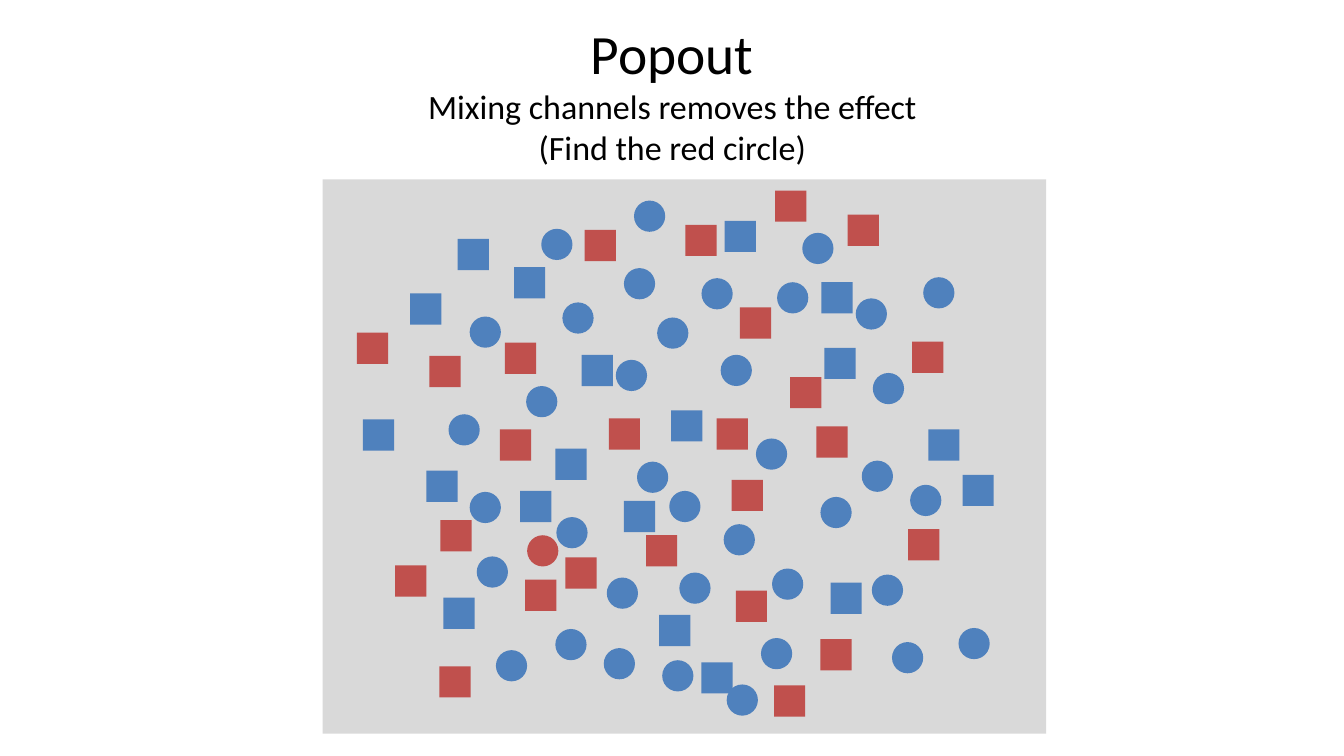
"""Build the popout slide: a red circle hidden among mixed circles and squares."""
import dataclasses
import typing

import pptx
import pptx.dml.color
import pptx.enum.shapes
import pptx.enum.text
import pptx.util

Spot = typing.Tuple[float, float]
Spots = typing.Sequence[Spot]
ShapeKind = pptx.enum.shapes.MSO_SHAPE


@dataclasses.dataclass(frozen=True)
class Theme:
    """Colours, font and type sizes of the slide."""
    blue: str = "4F81BD"
    red: str = "C0504D"
    panel: str = "D9D9D9"
    text: str = "000000"
    font: str = "Calibri"
    title_size: float = 39.6
    subtitle_size: float = 24.3


@dataclasses.dataclass(frozen=True)
class Box:
    """A rectangle on the slide, in inches."""
    left: float
    top: float
    width: float
    height: float

    def lengths(self) -> typing.Dict[str, pptx.util.Cm]:
        """Return left, top, width and height as slide lengths."""
        return {name: pptx.util.Cm(value * 2.54) for name, value in dataclasses.asdict(self).items()}


@dataclasses.dataclass(frozen=True)
class MarkStyle:
    """Shape and colour of one sort of mark."""
    kind: ShapeKind
    colour: str


@dataclasses.dataclass(frozen=True)
class Band:
    """Marks in one strip of the panel, each a slide left and a drop below the strip's top."""
    blue_circles: Spots = ()
    blue_squares: Spots = ()
    red_squares: Spots = ()
    target: Spots = ()


@dataclasses.dataclass(frozen=True)
class TitleLine:
    """One line of the title with its type size."""
    text: str
    size: float


THEME = Theme()
TITLE = Box(0.67, 0.3, 12, 1.25)
PANEL = Box(3.2, 1.78, 7.18, 5.5)
MARK_SIZE = 0.31

TITLE_LINES = [
    TitleLine("Popout", THEME.title_size),
    TitleLine("Mixing channels removes the effect", THEME.subtitle_size),
    TitleLine("(Find the red circle)", THEME.subtitle_size),
]

MARK_STYLES = {
    "blue_circles": MarkStyle(ShapeKind.OVAL, THEME.blue),
    "blue_squares": MarkStyle(ShapeKind.RECTANGLE, THEME.blue),
    "red_squares": MarkStyle(ShapeKind.RECTANGLE, THEME.red),
    "target": MarkStyle(ShapeKind.OVAL, THEME.red),
}

BANDS = [
    Band(blue_circles=[(5.37, 0.49), (6.29, 0.21)],
         blue_squares=[(7.19, 0.41)],
         red_squares=[(6.8, 0.45), (7.69, 0.11), (8.41, 0.35)]),
    Band(blue_circles=[(6.19, 0.38), (6.96, 0.48), (7.96, 0.03), (9.16, 0.47)],
         blue_squares=[(4.54, 0.09), (5.1, 0.37)],
         red_squares=[(5.8, 0)]),
    Band(blue_circles=[(4.66, 0.36), (5.58, 0.22), (6.52, 0.37), (7.71, 0.02), (8.49, 0.18)],
         blue_squares=[(4.07, 0.13), (8.15, 0.02)],
         red_squares=[(7.34, 0.27)]),
    Band(blue_circles=[(6.11, 0.29), (7.15, 0.24), (8.66, 0.42)],
         blue_squares=[(5.77, 0.24), (8.18, 0.17)],
         red_squares=[(3.54, 0.02), (4.26, 0.25), (5.01, 0.12), (7.84, 0.46), (9.05, 0.11)]),
    Band(blue_circles=[(4.45, 0.33), (5.22, 0.05)],
         blue_squares=[(3.6, 0.38), (6.66, 0.29), (9.21, 0.48)],
         red_squares=[(4.96, 0.48), (6.04, 0.37), (7.11, 0.37), (8.1, 0.45)]),
    Band(blue_circles=[(6.32, 0.3), (7.5, 0.07), (8.55, 0.29)],
         blue_squares=[(4.23, 0.39), (5.51, 0.17), (9.55, 0.43)],
         red_squares=[(7.26, 0.48)]),
    Band(blue_circles=[(4.66, 0.1), (5.52, 0.35), (6.64, 0.09), (7.18, 0.42), (8.14, 0.15), (9.03, 0.03)],
         blue_squares=[(5.16, 0.09), (6.19, 0.19)],
         red_squares=[(4.37, 0.38), (9.01, 0.47)]),
    Band(blue_circles=[(4.73, 0.24), (6.02, 0.45), (6.74, 0.4), (7.66, 0.36), (8.65, 0.42)],
         red_squares=[(3.92, 0.33), (5.21, 0.47), (5.61, 0.25), (6.41, 0.03)],
         target=[(5.23, 0.03)]),
    Band(blue_circles=[(5.51, 0.46), (9.51, 0.45)],
         blue_squares=[(4.4, 0.15), (6.54, 0.32), (8.24, 0)],
         red_squares=[(7.3, 0.08)]),
    Band(blue_circles=[(4.92, 0.17), (5.99, 0.15), (6.57, 0.27), (7.55, 0.05), (8.85, 0.09)],
         blue_squares=[(6.96, 0.29)],
         red_squares=[(4.36, 0.33), (8.14, 0.06)]),
    Band(blue_circles=[(7.21, 0.01)],
         red_squares=[(7.68, 0.02)]),
]


def set_attributes(target: typing.Any, values: typing.Dict[str, typing.Any]) -> None:
    """Set each named attribute on the target."""
    for name, value in values.items():
        setattr(target, name, value)


def draw_shape(shapes: typing.Any, style: MarkStyle, box: Box) -> None:
    """Draw a plain filled shape without outline or shadow."""
    shape = shapes.add_shape(style.kind, **box.lengths())
    shape.shadow.inherit = False
    shape.fill.solid()
    shape.fill.fore_color.rgb = pptx.dml.color.RGBColor.from_string(style.colour)
    shape.line.fill.background()


def draw_title(title: typing.Any, lines: typing.Sequence[TitleLine]) -> None:
    """Place the title and write its centred lines."""
    set_attributes(title, TITLE.lengths())
    frame = title.text_frame
    frame.text = "\n".join(line.text for line in lines)
    set_attributes(frame, {
        "word_wrap": True,
        "auto_size": pptx.enum.text.MSO_AUTO_SIZE.NONE,
        "vertical_anchor": pptx.enum.text.MSO_ANCHOR.MIDDLE,
    })
    for paragraph, line in zip(frame.paragraphs, lines):
        paragraph.alignment = pptx.enum.text.PP_ALIGN.CENTER
        font = paragraph.runs[0].font
        set_attributes(font, {"name": THEME.font, "size": pptx.util.Pt(line.size)})
        font.color.rgb = pptx.dml.color.RGBColor.from_string(THEME.text)


def draw_bands(shapes: typing.Any, bands: typing.Sequence[Band]) -> None:
    """Divide the panel into equal strips and draw the marks of each."""
    band_height = PANEL.height / len(bands)
    for index, band in enumerate(bands):
        band_top = PANEL.top + index * band_height
        for name, style in MARK_STYLES.items():
            for left, drop in getattr(band, name):
                draw_shape(shapes, style, Box(left, band_top + drop, MARK_SIZE, MARK_SIZE))


def main() -> None:
    """Build and save the presentation."""
    presentation = pptx.Presentation()
    set_attributes(presentation, {
        "slide_width": pptx.util.Cm(33.87),
        "slide_height": pptx.util.Cm(19.05),
    })
    slide = presentation.slides.add_slide(presentation.slide_layouts.get_by_name("Title Only"))
    draw_title(slide.shapes.title, TITLE_LINES)
    draw_shape(slide.shapes, MarkStyle(ShapeKind.RECTANGLE, THEME.panel), PANEL)
    draw_bands(slide.shapes.add_group_shape().shapes, BANDS)
    presentation.save("out.pptx")


if __name__ == "__main__":
    main()
